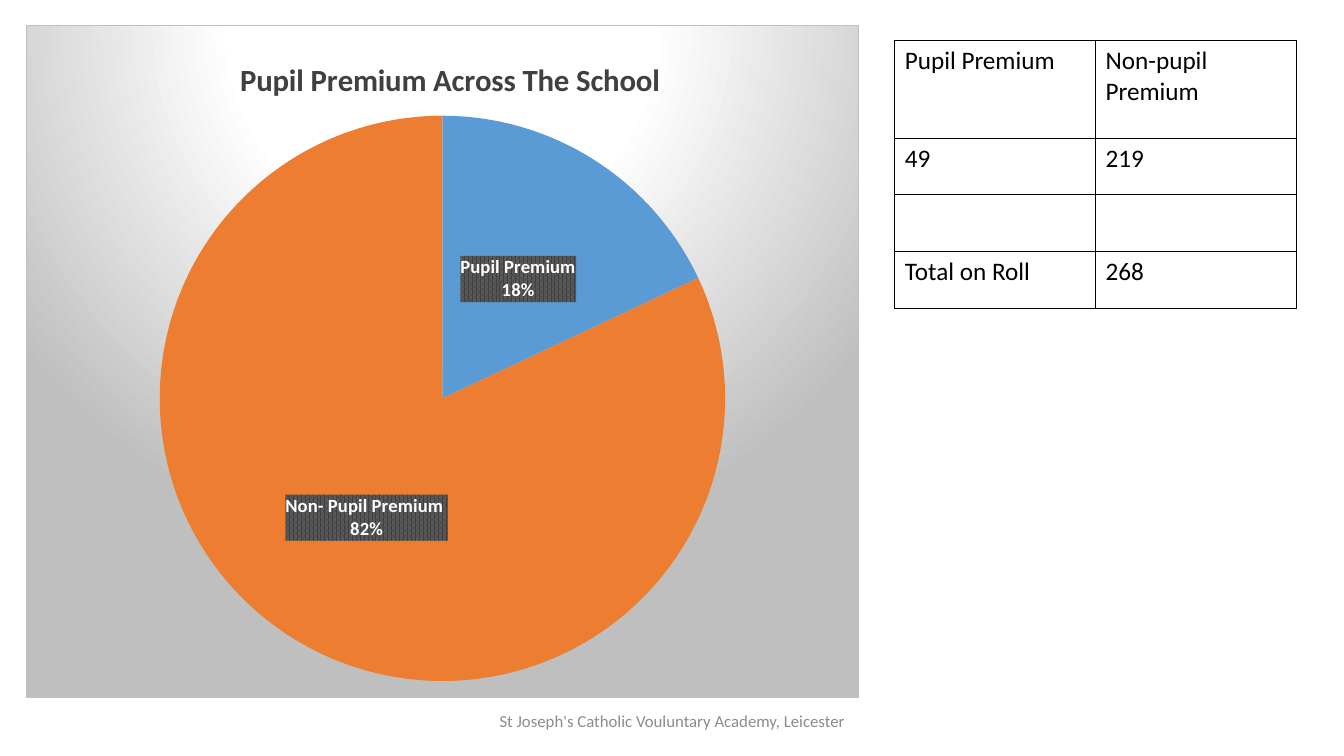
from lxml import etree
from pptx import Presentation
from pptx.chart.data import CategoryChartData
from pptx.dml.color import RGBColor
from pptx.enum.chart import XL_CHART_TYPE, XL_LABEL_POSITION
from pptx.enum.text import MSO_ANCHOR, PP_ALIGN
from pptx.oxml import parse_xml
from pptx.oxml.ns import nsdecls, qn
from pptx.util import Cm, Pt

PIE = XL_CHART_TYPE.PIE
LABEL_CENTER = XL_LABEL_POSITION.CENTER
CENTER, MIDDLE = PP_ALIGN.CENTER, MSO_ANCHOR.MIDDLE

FONT = "Calibri"
COLORS = {
    "black": "000000", "white": "FFFFFF", "title": "404040", "footer": "8C8C8C",
    "grey": "BFBFBF", "label": "595959", "blue": "5B9BD5", "orange": "ED7D31",
}
TITLE = "Pupil Premium Across The School"
SHARES = [("Pupil Premium", 18, "blue"), ("Non- Pupil Premium ", 82, "orange")]
ROLL = [
    ("Pupil Premium", "Non-pupil Premium"),
    ("49", "219"),
    ("", ""),
    ("Total on Roll", "268"),
]
FOOTER = "St Joseph's Catholic Vouluntary Academy, Leicester"

CHART_BOX = (Cm(0.66), Cm(0.64), Cm(20.98), Cm(16.94))
TABLE_LEFT, TABLE_TOP = Cm(22.55), Cm(1.02)
COLUMN_WIDTH, HEAD_HEIGHT, ROW_HEIGHT = Cm(5.06), Cm(2.46), Cm(1.43)
FOOTER_BOX = (Cm(11.23), Cm(17.65), Cm(11.43), Cm(1.02))
TITLE_PLACE = {"x": 0.25, "y": 0.04}
PIE_PLACE = {"x": 0.16, "y": 0.13, "w": 0.68, "h": 0.85}


def solid(color):
    return f'<a:solidFill><a:srgbClr val="{COLORS[color]}"/></a:solidFill>'


def style_font(font, size, color, bold=False):
    font.name, font.size, font.bold = FONT, Pt(size), bold
    font.color.rgb = RGBColor.from_string(COLORS[color])


def write_text(frame, text, size=18, color="black", align=None):
    para = frame.paragraphs[0]
    para.alignment = align
    style_font(para.font, size, color)
    if text:
        span = para.add_run()
        span.text = text
        style_font(span.font, size, color)


def manual_layout(place, inner=False):
    target = '<c:layoutTarget val="inner"/>' if inner else ""
    modes = "".join(f'<c:{side}Mode val="edge"/>' for side in "xy")
    values = "".join(f'<c:{key} val="{value}"/>' for key, value in place.items())
    return parse_xml(f'<c:layout {nsdecls("c")}><c:manualLayout>{target}{modes}'
                     f'{values}</c:manualLayout></c:layout>')


def place_part(part, layout, index):
    for old in part.findall(qn("c:layout")):
        part.remove(old)
    part.insert(index, layout)


def chart_background():
    stops = "".join(
        f'<a:gs pos="{position * 1000}"><a:srgbClr val="{COLORS[color]}"/></a:gs>'
        for position, color in [(0, "white"), (39, "white"), (100, "grey")])
    return parse_xml(
        f'<c:spPr {nsdecls("c", "a")}><a:gradFill><a:gsLst>{stops}</a:gsLst>'
        '<a:path path="circle"><a:fillToRect l="50000" t="-80000" r="50000" b="180000"/>'
        f'</a:path></a:gradFill><a:ln w="9525">{solid("grey")}</a:ln></c:spPr>')


def label_background():
    return parse_xml(
        f'<c:spPr {nsdecls("c", "a")}><a:pattFill prst="pct75">'
        f'<a:fgClr><a:srgbClr val="{COLORS["title"]}"/></a:fgClr>'
        f'<a:bgClr><a:srgbClr val="{COLORS["label"]}"/></a:bgClr>'
        '</a:pattFill><a:ln><a:noFill/></a:ln></c:spPr>')


def add_pie(page):
    data = CategoryChartData()
    data.categories = [name for name, _, _ in SHARES]
    data.add_series(TITLE, [share for _, share, _ in SHARES])
    chart = page.shapes.add_chart(PIE, *CHART_BOX, data).chart
    style_font(chart.font, 10, "black")
    chart.has_legend = False
    chart.has_title = True
    frame = chart.chart_title.text_frame
    frame.text = TITLE
    style_font(frame.paragraphs[0].runs[0].font, 22, "title", bold=True)
    chart.chart_title.include_in_layout = False

    plot = chart.plots[0]
    plot.vary_by_categories = True
    series = plot.series[0]
    for index, (_, _, color) in enumerate(SHARES):
        fill = series.points[index].format.fill
        fill.solid()
        fill.fore_color.rgb = RGBColor.from_string(COLORS[color])

    labels = series.data_labels
    labels.show_value = False
    labels.show_category_name = labels.show_percentage = True
    labels.position = LABEL_CENTER
    style_font(labels.font, 13.3, "white", bold=True)
    text_format = series._element.find(qn("c:dLbls")).find(qn("c:txPr"))
    text_format.addprevious(label_background())
    separator = etree.Element(qn("c:separator"))
    separator.text = "\n"
    series._element.find(qn("c:dLbls")).find(qn("c:showBubbleSize")).addnext(separator)

    body = chart._chartSpace.find(qn("c:chart"))
    place_part(body.find(qn("c:title")), manual_layout(TITLE_PLACE), 1)
    place_part(body.find(qn("c:plotArea")), manual_layout(PIE_PLACE, inner=True), 0)
    body.addnext(chart_background())


def border_cell(cell):
    properties = cell._tc.get_or_add_tcPr()
    for index, side in enumerate(("lnL", "lnR", "lnT", "lnB")):
        properties.insert(index, parse_xml(
            f'<a:{side} {nsdecls("a")} w="12700">{solid("black")}</a:{side}>'))


def add_roll_table(page):
    heights = [HEAD_HEIGHT] + [ROW_HEIGHT] * (len(ROLL) - 1)
    columns = len(ROLL[0])
    table = page.shapes.add_table(len(ROLL), columns, TABLE_LEFT, TABLE_TOP,
                                  COLUMN_WIDTH * columns, sum(heights)).table
    table.first_row = table.horz_banding = False
    for column in table.columns:
        column.width = COLUMN_WIDTH
    for row, height, texts in zip(table.rows, heights, ROLL):
        row.height = height
        for cell, text in zip(row.cells, texts):
            write_text(cell.text_frame, text)
            cell.fill.background()
            border_cell(cell)


def add_footer(page):
    frame = page.shapes.add_textbox(*FOOTER_BOX).text_frame
    frame.word_wrap = True
    frame.vertical_anchor = MIDDLE
    write_text(frame, FOOTER, size=12, color="footer", align=CENTER)


def main():
    deck = Presentation()
    deck.slide_width, deck.slide_height = Cm(33.87), Cm(19.05)
    page = deck.slides.add_slide(deck.slide_layouts[6])
    add_pie(page)
    add_roll_table(page)
    add_footer(page)
    deck.save("out.pptx")


if __name__ == "__main__":
    main()
